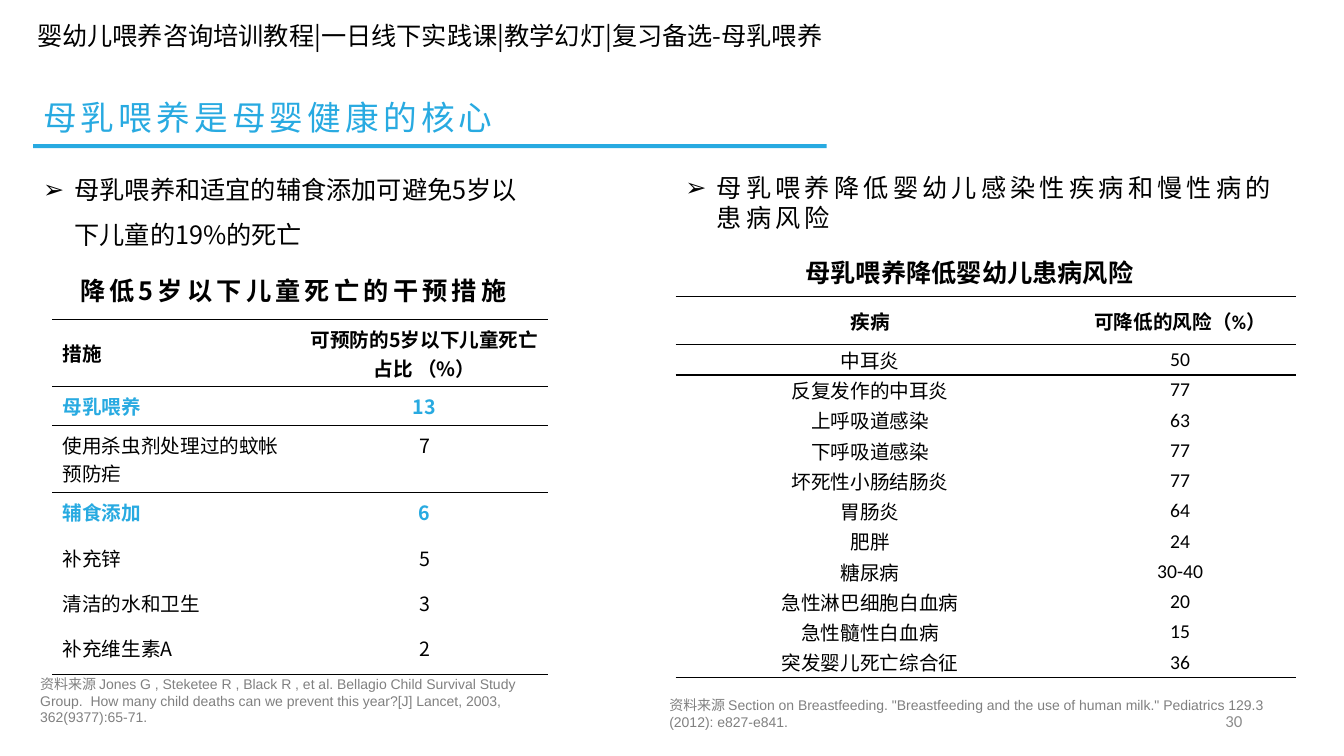
"""Build the breastfeeding slide with its two risk tables."""
from lxml import etree
from pptx import Presentation
from pptx.dml.color import RGBColor
from pptx.enum.shapes import MSO_SHAPE
from pptx.enum.text import MSO_ANCHOR as ANC, PP_ALIGN as AL
from pptx.oxml import parse_xml
from pptx.oxml.ns import nsdecls, qn
from pptx.util import Inches, Pt

NOTO, CALIBRI, ARIAL = "Noto Sans CJK SC", "Calibri", "Arial"
BLACK, BLUE, GREY, PALE = "000000", "28AAE1", "808080", "8C8C8C"
PLAIN_STYLE = "{2D5ABB26-0587-4C30-8999-92F81FD0307C}"

SOURCE = dict(size=10, font=ARIAL, color=GREY)
TEXTS = [
    ((0.27, 0.15, 10.14, 0.4), "婴幼儿喂养咨询培训教程|一日线下实践课|教学幻灯|复习备选-母乳喂养", {}),
    ((0.33, 0.85, 5.79, 0.68), "母乳喂养是母婴健康的核心",
     dict(size=24, color=BLUE, spc=3, line=0.9, anchor=ANC.MIDDLE)),
    ((0.33, 1.53, 5, 0.96), "母乳喂养和适宜的辅食添加可避免5岁以下儿童的19%的死亡",
     dict(line=1.5, bullet="➢")),
    ((6.7, 1.66, 6.16, 0.71), "母乳喂养降低婴幼儿感染性疾病和慢性病的患病风险",
     dict(spc=3, bullet="➢")),
    ((0.33, 2.67, 5.16, 0.47), "降低5岁以下儿童死亡的干预措施",
     dict(bold=True, spc=3, line=0.9, align=AL.CENTER, anchor=ANC.MIDDLE)),
    ((6.7, 2.5, 5.83, 0.4), "母乳喂养降低婴幼儿患病风险",
     dict(font=CALIBRI, bold=True, align=AL.CENTER)),
    ((0.3, 6.65, 5.19, 0.3),
     "资料来源 Jones G , Steketee R , Black R , et al. Bellagio Child Survival Study Group.  "
     "How many child deaths can we prevent this year?[J] Lancet, 2003, 362(9377):65-71.", SOURCE),
    ((6.54, 6.86, 6.32, 0.49),
     "资料来源 Section on Breastfeeding. \"Breastfeeding and the use of human milk.\" "
     "Pediatrics 129.3 (2012): e827-e841.", SOURCE),
    ((9.42, 6.95, 3, 0.4), "30",
     dict(size=12, font=CALIBRI, color=PALE, align=AL.RIGHT, anchor=ANC.MIDDLE)),
]
MEASURES = [
    ("措施", "可预防的5岁以下儿童死亡占比 （%）"),
    ("母乳喂养", "13"),
    ("使用杀虫剂处理过的蚊帐预防疟", "7"),
    ("辅食添加", "6"),
    ("补充锌", "5"),
    ("清洁的水和卫生", "3"),
    ("补充维生素A", "2"),
]
FEEDING = ("母乳喂养", "辅食添加")
DISEASES = [
    ("疾病", "可降低的风险（%）"),
    ("中耳炎", "50"),
    ("反复发作的中耳炎", "77"),
    ("上呼吸道感染", "63"),
    ("下呼吸道感染", "77"),
    ("坏死性小肠结肠炎", "77"),
    ("胃肠炎", "64"),
    ("肥胖", "24"),
    ("糖尿病", "30-40"),
    ("急性淋巴细胞白血病", "20"),
    ("急性髓性白血病", "15"),
    ("突发婴儿死亡综合征", "36"),
]


def rgb(color):
    return RGBColor.from_string(color)


def write(tf, text, size=18, font=NOTO, color=BLACK, bold=False, spc=0,
          line=None, align=AL.LEFT, bullet=None):
    p = tf.paragraphs[0]
    p.alignment = align
    if line:
        p.line_spacing = line
    if bullet:
        pPr = p._p.get_or_add_pPr()
        pPr.set("marL", str(Inches(0.31)))
        pPr.set("indent", str(-Inches(0.31)))
        etree.SubElement(pPr, qn("a:buFont")).set("typeface", ARIAL)
        etree.SubElement(pPr, qn("a:buChar")).set("char", bullet)
    r = p.add_run()
    r.text = text
    r.font.size, r.font.name, r.font.bold = Pt(size), font, bold
    r.font.color.rgb = rgb(color)
    rPr = r._r.get_or_add_rPr()
    etree.SubElement(rPr, qn("a:ea")).set("typeface", NOTO)
    if spc:
        rPr.set("spc", str(spc * 100))


def add_text(slide, box, text, anchor=ANC.TOP, **fmt):
    tf = slide.shapes.add_textbox(*map(Inches, box)).text_frame
    tf.word_wrap = True
    tf.vertical_anchor = anchor
    write(tf, text, **fmt)


def add_rule(cell, side):
    cell._tc.get_or_add_tcPr().insert(0, parse_xml(
        f'<a:ln{side} {nsdecls("a")} w="{Pt(1)}"><a:solidFill>'
        f'<a:srgbClr val="{BLACK}"/></a:solidFill></a:ln{side}>'))


def add_table(slide, left, top, widths, heights, rows, rules, style):
    """Draw rows, with a line above each row index in rules."""
    table = slide.shapes.add_table(
        len(rows), len(widths), Inches(left), Inches(top),
        Inches(sum(widths)), Inches(sum(heights))).table
    table.first_row = table.horz_banding = False
    table._tbl.tblPr.find(qn("a:tableStyleId")).text = PLAIN_STYLE
    for col, width in zip(table.columns, widths):
        col.width = Inches(width)
    for i, (row, height) in enumerate(zip(rows, heights)):
        table.rows[i].height = Inches(height)
        for j, text in enumerate(row):
            cell = table.cell(i, j)
            cell.fill.background()
            style(cell, i, j, row, text)
            if i + 1 in rules:
                add_rule(cell, "B")
            if i in rules:
                add_rule(cell, "T")


def measure_cell(cell, i, j, row, text):
    key = row[0] in FEEDING
    cell.vertical_anchor = ANC.TOP if i else ANC.MIDDLE
    write(cell.text_frame, text, size=14, color=BLUE if key else BLACK,
          bold=key or i == 0, align=AL.CENTER if j else AL.LEFT)


def disease_cell(cell, i, j, row, text):
    cell.vertical_anchor = ANC.MIDDLE
    cell.margin_left, cell.margin_right = Inches(0.12), Inches(0.1)
    cell.margin_top = cell.margin_bottom = 0
    write(cell.text_frame, text, size=14, font=CALIBRI, bold=i == 0, align=AL.CENTER)


def main():
    prs = Presentation()
    prs.slide_width, prs.slide_height = Inches(13.33), Inches(7.5)
    slide = prs.slides.add_slide(prs.slide_layouts[6])
    bar = slide.shapes.add_shape(MSO_SHAPE.RECTANGLE, *map(Inches, (0.33, 1.43, 7.87, 0.04)))
    bar.shadow.inherit = False
    bar.fill.solid()
    bar.fill.fore_color.rgb = rgb(BLUE)
    bar.line.fill.background()
    add_table(slide, 0.52, 3.17, [2.46] * 2, [0.61, 0.35, 0.57] + [0.45] * 4,
              MEASURES, (0, 1, 2, len(MEASURES)), measure_cell)
    add_table(slide, 6.7, 2.94, [3.84, 2.31], [0.48] + [0.3] * 11,
              DISEASES, (0, 1, len(DISEASES)), disease_cell)
    for box, text, fmt in TEXTS:
        add_text(slide, box, text, **fmt)
    prs.save("out.pptx")


if __name__ == "__main__":
    main()
